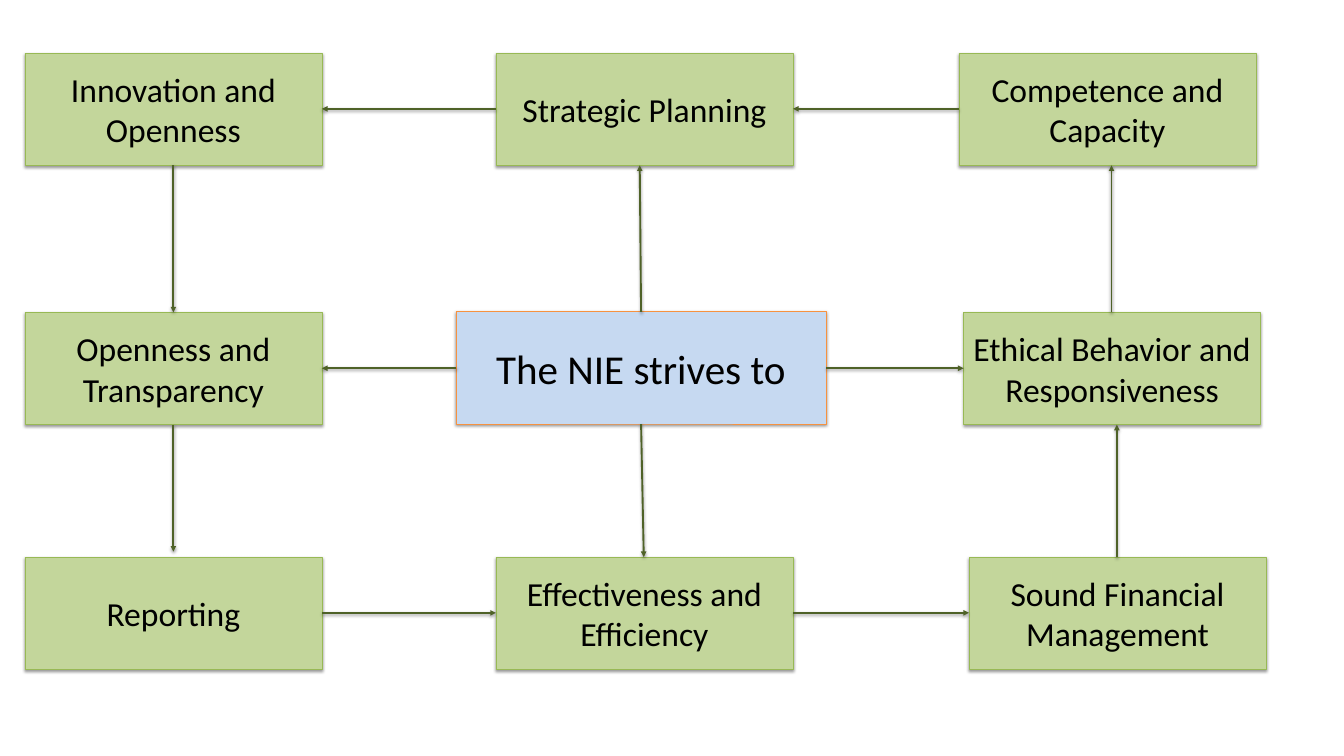
from dataclasses import dataclass

from lxml import etree
from pptx import Presentation
from pptx import util as u
from pptx.dml.color import RGBColor
from pptx.enum import shapes, text
from pptx.oxml.ns import qn

PX = 9144  # 100 px to the inch


@dataclass(frozen=True)
class Theme:
    font: str = "Calibri"
    ink: str = "000000"
    arrow: str = "4F6228"
    arrow_pt: float = 2
    border_pt: float = 0.75
    # fill, border, text size
    value: tuple = ("C3D69B", "98B955", 36)
    hub: tuple = ("C6D9F1", "F69240", 44)


THEME = Theme()

# Content: name -> (wording, left, row)
ROWS = {"top": 79, "middle": 465, "bottom": 829}
BOX_W, BOX_H = 442, 167
HUB = ("The NIЕ strives to", 679, 464, 550, BOX_H)
VALUES = {
    "effect": ("Effectiveness and Efficiency", 738, "bottom"),
    "report": ("Reporting", 37, "bottom"),
    "open": ("Openness and Transparency", 37, "middle"),
    "compete": ("Competence and Capacity", 1427, "top"),
    "ethics": ("Ethical Behavior and Responsiveness", 1434, "middle"),
    "finance": ("Sound Financial Management", 1442, "bottom"),
    "innovate": ("Innovation and Openness", 37, "top"),
    "strategy": ("Strategic Planning", 738, "top"),
}

# Arrows across join facing sides: (from, to)
ACROSS = [
    ("hub", "ethics"), ("hub", "open"),
    ("strategy", "innovate"), ("compete", "strategy"),
    ("report", "effect"), ("effect", "finance"),
]
# Arrows up and down: (from, to, x at start, x at end, gap before target)
UP_DOWN = [
    ("hub", "strategy", 954, 952, 0),
    ("hub", "effect", 954, 958, 0),
    ("innovate", "open", 258, 258, 0),
    ("open", "report", 258, 258, 8),
    ("finance", "ethics", 1662, 1662, 0),
    ("ethics", "compete", 1654, 1654, 0),
]


def rgb(value):
    return RGBColor.from_string(value)


def add_shadow(effects):
    shadow = etree.SubElement(effects, qn("a:outerShdw"), blurRad="40000",
                              dist="20000", dir="5400000", rotWithShape="0")
    color = etree.SubElement(shadow, qn("a:srgbClr"), val=THEME.ink)
    etree.SubElement(color, qn("a:alpha"), val="38000")


def add_box(s, wording, left, top, width, height, style):
    fill, border, size = style
    sp = s.shapes.add_shape(shapes.MSO_SHAPE.RECTANGLE,
                            *(n * PX for n in (left, top, width, height)))
    sp.fill.solid()
    sp.fill.fore_color.rgb = rgb(fill)
    sp.line.color.rgb = rgb(border)
    sp.line.width = u.Pt(THEME.border_pt)
    sp.shadow.inherit = False
    add_shadow(sp._element.spPr.find(qn("a:effectLst")))

    tf = sp.text_frame
    tf.text = wording
    tf.word_wrap = True
    tf.vertical_anchor = text.MSO_ANCHOR.MIDDLE
    p = tf.paragraphs[0]
    p.alignment = text.PP_ALIGN.CENTER
    font = p.runs[0].font
    font.name, font.size = THEME.font, u.Pt(size)
    font.color.rgb = rgb(THEME.ink)


def add_arrow(s, x1, y1, x2, y2):
    line = s.shapes.add_connector(shapes.MSO_CONNECTOR.STRAIGHT,
                                  *(n * PX for n in (x1, y1, x2, y2)))
    line.line.color.rgb = rgb(THEME.arrow)
    line.line.width = u.Pt(THEME.arrow_pt)
    etree.SubElement(line.line._get_or_add_ln(), qn("a:tailEnd"), type="triangle")
    add_shadow(etree.SubElement(line._element.spPr, qn("a:effectLst")))


def facing(start, size, other):
    """Return the edge of a box nearest to another box, along one axis."""
    return start + size if other > start else start


def main():
    prs = Presentation()
    prs.slide_width, prs.slide_height = 2000 * PX, 1125 * PX
    s = prs.slides.add_slide(prs.slide_layouts[6])

    # Boxes
    boxes = {"hub": HUB[1:]}
    add_box(s, *HUB, THEME.hub)
    for name, (wording, left, row) in VALUES.items():
        boxes[name] = (left, ROWS[row], BOX_W, BOX_H)
        add_box(s, wording, *boxes[name], THEME.value)

    # Arrows across
    for start, end in ACROSS:
        (ax, _, aw, _), (bx, by, bw, bh) = boxes[start], boxes[end]
        y = by + bh // 2
        add_arrow(s, facing(ax, aw, bx), y, facing(bx, bw, ax), y)

    # Arrows up and down
    for start, end, x1, x2, gap in UP_DOWN:
        (_, ay, _, ah), (_, by, _, bh) = boxes[start], boxes[end]
        add_arrow(s, x1, facing(ay, ah, by), x2, facing(by, bh, ay) - gap)

    prs.save("out.pptx")


if __name__ == "__main__":
    main()
